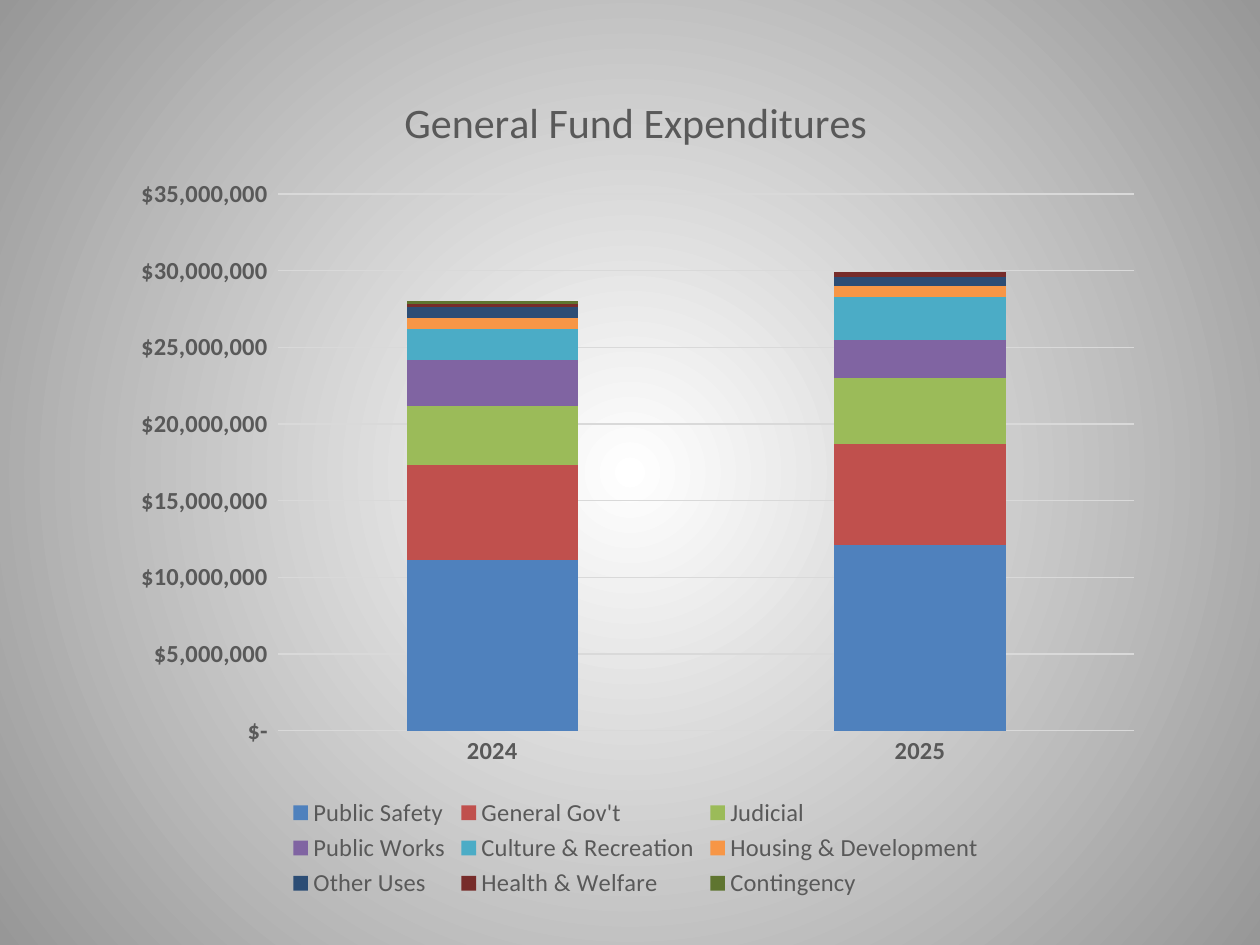
from lxml import etree
from pptx import Presentation
from pptx.chart.data import CategoryChartData
from pptx.dml.color import RGBColor
from pptx.enum.chart import XL_CHART_TYPE, XL_LEGEND_POSITION, XL_TICK_MARK
from pptx.oxml.ns import qn
from pptx.util import Inches, Pt

WHITE = RGBColor(0xFF, 0xFF, 0xFF)
EDGE_GRAY = RGBColor(0x97, 0x97, 0x97)
GRID_GRAY = RGBColor(0xD9, 0xD9, 0xD9)
TEXT_GRAY = RGBColor(0x59, 0x59, 0x59)
FONT = "Calibri"
DOLLARS = r'_("$"* #,##0_);_("$"* \(#,##0\);_("$"* "-"_);_(@_)'

YEARS = ["2024", "2025"]
EXPENDITURES = [
    ("Public Safety", (11100000, 12100000), RGBColor(0x4F, 0x81, 0xBD)),
    ("General Gov't", (6200000, 6600000), RGBColor(0xC0, 0x50, 0x4D)),
    ("Judicial", (3900000, 4300000), RGBColor(0x9B, 0xBB, 0x59)),
    ("Public Works", (3000000, 2500000), RGBColor(0x80, 0x64, 0xA2)),
    ("Culture & Recreation", (2000000, 2800000), RGBColor(0x4B, 0xAC, 0xC6)),
    ("Housing & Development", (700000, 700000), RGBColor(0xF7, 0x96, 0x46)),
    ("Other Uses", (700000, 600000), RGBColor(0x2C, 0x4D, 0x75)),
    ("Health & Welfare", (200000, 300000), RGBColor(0x77, 0x2C, 0x2A)),
    ("Contingency", (200000, 0), RGBColor(0x5F, 0x75, 0x30)),
]


def set_font(font, size, bold=False):
    font.name = FONT
    font.size = Pt(size)
    font.bold = bold
    font.color.rgb = TEXT_GRAY


def set_layout(parent, index, **values):
    """Place a chart part by fractions of the chart's size."""
    for old in parent.findall(qn("c:layout")):
        parent.remove(old)
    layout = etree.Element(qn("c:layout"))
    manual = etree.SubElement(layout, qn("c:manualLayout"))
    for tag, value in values.items():
        etree.SubElement(manual, qn(f"c:{tag}")).set("val", str(value))
    parent.insert(index, layout)


def fill_background(s):
    """Radial gradient, light in the centre."""
    fill = s.background.fill
    fill.gradient()
    for stop, color in zip(fill.gradient_stops, (WHITE, EDGE_GRAY)):
        stop.color.rgb = color
    grad = s.element.find(".//" + qn("a:gradFill"))
    grad.remove(grad.find(qn("a:lin")))
    circle = etree.SubElement(grad, qn("a:path"), {"path": "circle"})
    etree.SubElement(circle, qn("a:fillToRect"), dict.fromkeys("ltrb", "50000"))


def style_axis(axis):
    axis.major_tick_mark = axis.minor_tick_mark = XL_TICK_MARK.NONE
    axis.format.line.fill.background()
    set_font(axis.tick_labels.font, 14, bold=True)


def add_expenditure_chart(s, left, top, width, height):
    data = CategoryChartData(number_format=DOLLARS)
    data.categories = YEARS
    for name, values, _ in EXPENDITURES:
        data.add_series(name, values)
    chart = s.shapes.add_chart(
        XL_CHART_TYPE.COLUMN_STACKED, left, top, width, height, data).chart
    chart.font.name = FONT
    chart.font.size = Pt(10)

    tf = chart.chart_title.text_frame
    tf.text = "General Fund Expenditures"
    set_font(tf.paragraphs[0].font, 24)
    chart.chart_title.include_in_layout = False
    set_layout(chart.element.find(".//" + qn("c:title")), 1,
               xMode="edge", yMode="edge",
               x=Inches(2.23) / width, y=Inches(0.19) / height)

    plot = chart.plots[0]
    plot.gap_width = 150
    plot.overlap = 100
    plot.vary_by_categories = False
    for series, (_, _, color) in zip(plot.series, EXPENDITURES):
        series.format.fill.solid()
        series.format.fill.fore_color.rgb = color
    set_layout(chart.element.find(".//" + qn("c:plotArea")), 0,
               layoutTarget="inner", xMode="edge", yMode="edge",
               x=Inches(1.29) / width, y=Inches(1.04) / height,
               w=Inches(6.79) / width, h=Inches(4.26) / height)

    style_axis(chart.category_axis)
    axis = chart.value_axis
    style_axis(axis)
    axis.tick_labels.number_format = DOLLARS
    axis.tick_labels.number_format_is_linked = False
    grid = axis.major_gridlines.format.line
    grid.color.rgb = GRID_GRAY
    grid.width = Pt(0.75)

    chart.has_legend = True
    chart.legend.position = XL_LEGEND_POSITION.BOTTOM
    chart.legend.include_in_layout = False
    set_font(chart.legend.font, 14)


def main():
    prs = Presentation()
    prs.slide_width, prs.slide_height = Inches(10), Inches(7.5)
    s = prs.slides.add_slide(prs.slide_layouts[6])
    fill_background(s)
    add_expenditure_chart(s, Inches(0.92), Inches(0.5), Inches(8.25), Inches(6.67))
    prs.save("out.pptx")


if __name__ == "__main__":
    main()
